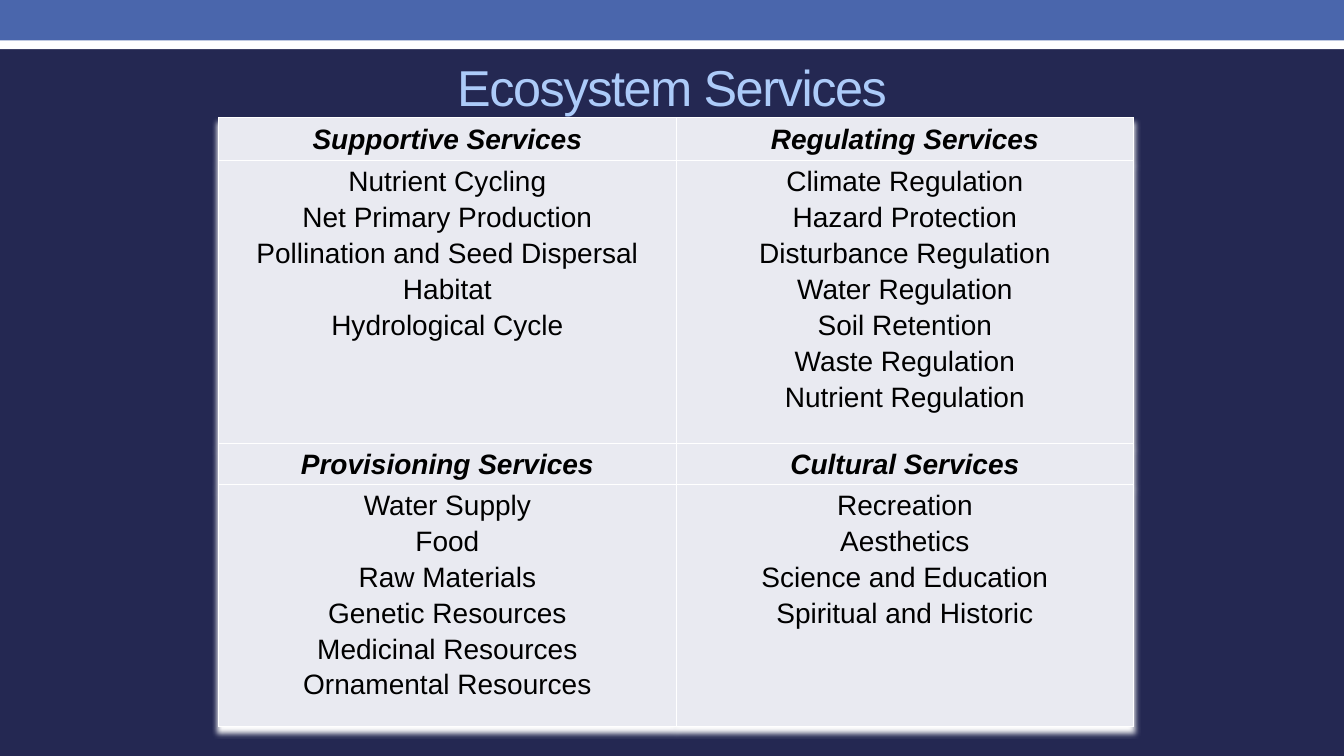
"""Build the Ecosystem Services slide."""
from lxml import etree
from pptx import Presentation
from pptx.dml.color import RGBColor
from pptx.enum.shapes import MSO_SHAPE
from pptx.enum.text import MSO_ANCHOR, PP_ALIGN
from pptx.oxml import parse_xml
from pptx.util import Cm, Pt

RECT = MSO_SHAPE.RECTANGLE
CENTER = PP_ALIGN.CENTER
MIDDLE = MSO_ANCHOR.MIDDLE
FONT = "Arial"
NS = "http://schemas.openxmlformats.org/drawingml/2006/main"
COLORS = {"back": "242852", "band": "4A66AC", "white": "FFFFFF",
          "title": "ACCBF9", "cell": "E9EAF1", "text": "000000"}
WIDTH, HEIGHT = Cm(33.87), Cm(19.05)
COL = Cm(11.53)
ROWS = [Cm(1.08), Cm(7.13), Cm(1.02), Cm(6.1)]
GROUPS = [
    [("Supportive Services",
      ["Nutrient Cycling", "Net Primary Production",
       "Pollination and Seed Dispersal", "Habitat", "Hydrological Cycle"]),
     ("Regulating Services",
      ["Climate Regulation", "Hazard Protection", "Disturbance Regulation",
       "Water Regulation", "Soil Retention", "Waste Regulation",
       "Nutrient Regulation"])],
    [("Provisioning Services",
      ["Water Supply", "Food", "Raw Materials", "Genetic Resources",
       "Medicinal Resources", "Ornamental Resources"]),
     ("Cultural Services",
      ["Recreation", "Aesthetics", "Science and Education",
       "Spiritual and Historic"])],
]


def paint(fill, name):
    """Fill with one named colour."""
    fill.solid()
    fill.fore_color.rgb = RGBColor.from_string(COLORS[name])


def style(para, size, name, strong=False):
    """Centre a paragraph and format its runs."""
    para.alignment = CENTER
    for run in para.runs:
        font = run.font
        font.name, font.size = FONT, Pt(size)
        font.bold = font.italic = strong
        font.color.rgb = RGBColor.from_string(COLORS[name])


def add_band(slide, top, height, name):
    """Add a band across the whole slide."""
    band = slide.shapes.add_shape(RECT, 0, top, WIDTH, height)
    band.shadow.inherit = False
    paint(band.fill, name)
    band.line.fill.background()


def add_title(slide, text):
    """Add the slide title with tightened letters."""
    box = slide.shapes.add_textbox(Cm(1.7), Cm(1.47), Cm(30.48), Cm(1.4))
    frame = box.text_frame
    frame.word_wrap = True
    frame.vertical_anchor = MIDDLE
    frame.text = text
    para = frame.paragraphs[0]
    style(para, 36, "title")
    para.runs[0].font._element.set("spc", "-100")


def add_edges(cell):
    """Draw thin white borders round a cell."""
    props = cell._tc.get_or_add_tcPr()
    for i, side in enumerate("LRTB"):
        line = etree.Element(f"{{{NS}}}ln{side}", w=str(Pt(1)))
        fill = etree.SubElement(line, f"{{{NS}}}solidFill")
        etree.SubElement(fill, f"{{{NS}}}srgbClr", val=COLORS["white"])
        props.insert(i, line)


def fill_cell(cell, lines, strong):
    """Write the lines of one cell and format it."""
    cell.margin_left = cell.margin_right = Cm(0.18)
    cell.margin_top, cell.margin_bottom = Cm(0.03), 0
    paint(cell.fill, "cell")
    add_edges(cell)
    cell.text_frame.text = "\n".join(lines)
    for para in cell.text_frame.paragraphs:
        para.line_spacing = 1.15
        style(para, 20, "text", strong)
    if not strong:
        cell.text_frame.paragraphs[0].space_before = Pt(6)


def add_glow(table):
    """Give the table a soft white shadow."""
    table._tbl.tblPr.insert(0, parse_xml(
        f'<a:effectLst xmlns:a="{NS}"><a:outerShdw blurRad="50800" '
        'dist="50800" dir="5400000" algn="t" rotWithShape="0">'
        f'<a:srgbClr val="{COLORS["white"]}"/></a:outerShdw></a:effectLst>'))


def add_grid(slide):
    """Add the table of services."""
    table = slide.shapes.add_table(
        len(ROWS), 2, Cm(5.51), Cm(2.97), 2 * COL, sum(ROWS)).table
    table.first_row = table.horz_banding = False
    add_glow(table)
    for col in table.columns:
        col.width = COL
    for row, height in zip(table.rows, ROWS):
        row.height = height
    for i, pair in enumerate(GROUPS):
        for j, (head, items) in enumerate(pair):
            fill_cell(table.cell(2 * i, j), [head], True)
            fill_cell(table.cell(2 * i + 1, j), items, False)


def main():
    """Build and save the slide."""
    prs = Presentation()
    prs.slide_width, prs.slide_height = WIDTH, HEIGHT
    slide = prs.slides.add_slide(prs.slide_layouts[6])
    paint(slide.background.fill, "back")
    add_band(slide, Cm(0.61), Cm(0.63), "white")
    add_band(slide, 0, Cm(1.02), "band")
    add_title(slide, "Ecosystem Services")
    add_grid(slide)
    prs.save("out.pptx")


if __name__ == "__main__":
    main()
